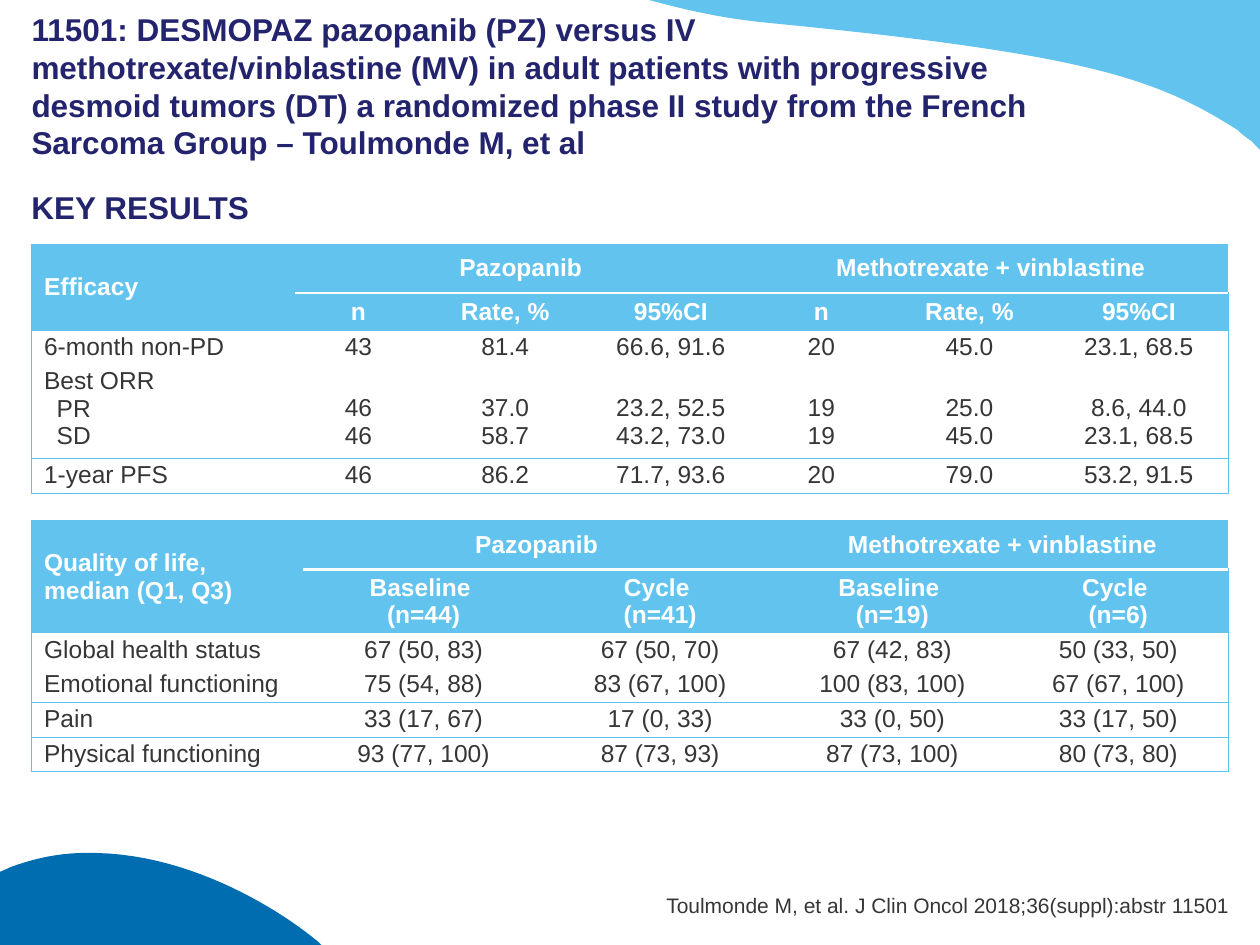
from collections import namedtuple
from dataclasses import dataclass

from lxml import etree
from pptx import Presentation
from pptx.dml.color import RGBColor
from pptx.enum.text import MSO_ANCHOR, MSO_AUTO_SIZE, PP_ALIGN
from pptx.oxml.ns import qn
from pptx.util import Inches, Pt

LEFT, CENTER, RIGHT = PP_ALIGN.LEFT, PP_ALIGN.CENTER, PP_ALIGN.RIGHT
TOP, MIDDLE, BOTTOM = MSO_ANCHOR.TOP, MSO_ANCHOR.MIDDLE, MSO_ANCHOR.BOTTOM
NO_AUTOFIT = MSO_AUTO_SIZE.NONE
TITLE_ONLY = 5
CURVE_STEPS = 24
PLAIN_TABLE_STYLE = "{2D5ABB26-0587-4C30-8999-92F81FD0307C}"

Box = namedtuple("Box", "left top width height")


@dataclass(frozen=True)
class Theme:
    font: str = "Arial"
    heading: str = "23246D"
    body: str = "363636"
    white: str = "FFFFFF"
    sky: str = "62C4EE"
    deep: str = "006DB0"
    rule: str = "5CC1EC"
    heading_size: int = 18
    table_size: int = 14
    footer_size: int = 12
    thin: float = 0.75
    thick: float = 1.5


THEME = Theme()

TITLE = (
    "11501: DESMOPAZ pazopanib (PZ) versus IV \v"
    "methotrexate/vinblastine (MV) in adult patients with progressive desmoid tumors (DT) "
    "a randomized phase II study from the French Sarcoma Group – Toulmonde M, et al"
)
ARMS = ["Pazopanib ", "Methotrexate + vinblastine"]

EFFICACY = dict(
    corner="Efficacy",
    columns=[2.09, 1.01, 1.32, 1.31, 1.08, 1.27, 1.42],
    rows=[0.39, 0.3, 0.27, 0.74, 0.28],
    subheads=["n", "Rate, %", "95%CI"] * 2,
    body=[
        ["6-month non-PD", "43", "81.4", "66.6, 91.6", "20", "45.0", "23.1, 68.5"],
        ["Best ORR\nPR\nSD", "46\n46", "37.0\n58.7", "23.2, 52.5\n43.2, 73.0",
         "19\n19", "25.0\n45.0", "8.6, 44.0\n23.1, 68.5"],
        ["1-year PFS", "46", "86.2", "71.7, 93.6", "20", "79.0", "53.2, 91.5"],
    ],
    ruled_edges={4, 5},
)
QUALITY = dict(
    corner="Quality of life, median (Q1, Q3)",
    columns=[2.16, 1.91, 1.85, 1.84, 1.75],
    rows=[0.39, 0.5] + [0.275] * 4,
    subheads=["Baseline \n(n=44)", "Cycle \n(n=41)", "Baseline \n(n=19)", "Cycle \n(n=6)"],
    body=[
        ["Global health status", "67 (50, 83)", "67 (50, 70)", "67 (42, 83)", "50 (33, 50)"],
        ["Emotional functioning", "75 (54, 88)", "83 (67, 100)", "100 (83, 100)", "67 (67, 100)"],
        ["Pain", "33 (17, 67)", "17 (0, 33)", "33 (0, 50)", "33 (17, 50)"],
        ["Physical functioning", "93 (77, 100)", "87 (73, 93)", "87 (73, 100)", "80 (73, 80)"],
    ],
    ruled_edges={4, 5, 6},
)

TOP_WAVE = [
    [(0, 0)], [(100, 0)], [(100, 100)], [(98.6, 94.1)],
    [(97.7, 91.6), (96.9, 89.1), (96.3, 86.6)],
    [(82.9, 52.1), (72, 36.1), (19.2, 15.1)],
    [(12.8, 12.6), (7, 7.6), (1.6, 1.7)],
]
BOTTOM_WAVE = [
    [(26.3, 0)], [(56.9, -2.7), (85.5, 57.5), (98.8, 95.9)],
    [(100, 100)], [(0, 100)], [(0, 20.5)], [(3.5, 15.1)],
    [(11, 5.5), (18.8, 0), (26.3, 0)],
]


def percent_box(presentation, left, top, width, height):
    across, down = presentation.slide_width / 100, presentation.slide_height / 100
    return Box(*(round(value) for value in (left * across, top * down, width * across, height * down)))


def write_text(frame, text, size, color, bold=False, align=LEFT, anchor=TOP,
               margins=(0, 0.05, 0, 0.05), later_indent=0):
    frame.word_wrap = True
    frame.vertical_anchor = anchor
    (frame.margin_left, frame.margin_top,
     frame.margin_right, frame.margin_bottom) = (Inches(margin) for margin in margins)
    frame.text = text
    for index, paragraph in enumerate(frame.paragraphs):
        paragraph.alignment = align
        if index and later_indent:
            paragraph._p.get_or_add_pPr().set("marL", str(Inches(later_indent)))
        for run in paragraph.runs:
            run.font.name = THEME.font
            run.font.size = Pt(size)
            run.font.bold = bold
            run.font.color.rgb = RGBColor.from_string(color)


def add_label(slide, box, text, size, color, **text_format):
    frame = slide.shapes.add_textbox(*box).text_frame
    write_text(frame, text, size, color, **text_format)


def place_title(slide, box, text):
    title = slide.shapes.title
    title.left, title.top, title.width, title.height = box
    write_text(title.text_frame, text, THEME.heading_size, THEME.heading, bold=True,
               anchor=BOTTOM, margins=(0, 0.05, 0, 0))
    title.text_frame.auto_size = NO_AUTOFIT


def curve_points(start, first, second, end):
    for step in range(1, CURVE_STEPS + 1):
        t = step / CURVE_STEPS
        weights = ((1 - t) ** 3, 3 * t * (1 - t) ** 2, 3 * t * t * (1 - t), t ** 3)
        yield tuple(sum(weight * point[axis] for weight, point in zip(weights, (start, first, second, end)))
                    for axis in (0, 1))


def add_wave(slide, box, segments, color):
    outline = list(segments[0])
    for segment in segments[1:]:
        outline += curve_points(outline[-1], *segment) if len(segment) == 3 else segment
    points = [(round(box.left + x * box.width / 100), round(box.top + y * box.height / 100))
              for x, y in outline]
    builder = slide.shapes.build_freeform(*points[0])
    builder.add_line_segments(points[1:], close=True)
    wave = builder.convert_to_shape()
    wave.shadow.inherit = False
    wave.fill.solid()
    wave.fill.fore_color.rgb = RGBColor.from_string(color)
    wave.line.fill.background()
    slide.shapes._spTree.insert(2, wave._element)


def set_borders(cell, **borders):
    properties = cell._tc.get_or_add_tcPr()
    for index, side in enumerate(("L", "R", "T", "B")):
        border = borders.get(side)
        line = etree.Element(qn(f"a:ln{side}"))
        if border:
            color, width = border
            line.set("w", str(Pt(width)))
            fill = etree.SubElement(line, qn("a:solidFill"))
            etree.SubElement(fill, qn("a:srgbClr")).set("val", color)
        else:
            etree.SubElement(line, qn("a:noFill"))
        properties.insert(index, line)


def add_results_table(slide, box, corner, columns, rows, subheads, body, ruled_edges):
    table_shape = slide.shapes.add_table(len(rows), len(columns), *box)
    table = table_shape.table
    table.first_row = table.horz_banding = False
    table._tbl.tblPr.find(qn("a:tableStyleId")).text = PLAIN_TABLE_STYLE
    for column, share in zip(table.columns, columns):
        column.width = round(box.width * share / sum(columns))
    for row, share in zip(table.rows, rows):
        row.height = round(box.height * share / sum(rows))

    span = len(subheads) // len(ARMS)
    arm_row = [corner] + [text for arm in ARMS for text in [arm] + [""] * (span - 1)]
    thin, thick = (THEME.rule, THEME.thin), (THEME.white, THEME.thick)

    for row_index, texts in enumerate([arm_row, [""] + subheads] + body):
        header = row_index < 2
        most_lines = max(text.count("\n") for text in texts)
        for column_index, text in enumerate(texts):
            cell = table.cell(row_index, column_index)
            if header:
                cell.fill.solid()
                cell.fill.fore_color.rgb = RGBColor.from_string(THEME.sky)
            else:
                cell.fill.background()
            lowered = not header and text.count("\n") < most_lines
            anchor = MIDDLE if header else BOTTOM if lowered else TOP
            write_text(cell.text_frame, text, THEME.table_size,
                       THEME.white if header else THEME.body, bold=header,
                       align=CENTER if column_index else LEFT, later_indent=0 if header or column_index else 0.1)
            cell.vertical_anchor = anchor
            cell.margin_left = cell.margin_right = Inches(0.1)
            cell.margin_top = Inches(0.02)
            cell.margin_bottom = Inches(0.07 if lowered else 0.02)

            def edge(number):
                if number == 1 and column_index:
                    return thick
                return thin if number in ruled_edges else None

            set_borders(cell, T=edge(row_index), B=edge(row_index + 1),
                        L=None if column_index else thin,
                        R=thin if column_index == len(columns) - 1 else None)

    table.cell(0, 0).merge(table.cell(1, 0))
    for first in range(1, len(columns), span):
        table.cell(0, first).merge(table.cell(0, first + span - 1))


def main():
    presentation = Presentation()
    presentation.slide_width, presentation.slide_height = Inches(10), Inches(7.5)
    slide = presentation.slides.add_slide(presentation.slide_layouts[TITLE_ONLY])

    def area(*shares):
        return percent_box(presentation, *shares)

    add_wave(slide, area(51.5, 0, 48.5, 15.87), TOP_WAVE, THEME.sky)
    add_wave(slide, area(0, 90.27, 25.5, 9.73), BOTTOM_WAVE, THEME.deep)
    place_title(slide, area(2.5, 3.33, 85.2, 13.73), TITLE)
    add_label(slide, area(2.5, 19.2, 95, 77.47), "KEY RESULTS", THEME.heading_size, THEME.heading, bold=True)
    add_label(slide, area(52.6, 94.4, 45, 2.67), "Toulmonde M, et al. J Clin Oncol 2018;36(suppl):abstr 11501",
              THEME.footer_size, THEME.body, align=RIGHT, anchor=BOTTOM, margins=(0, 0, 0, 0))
    add_results_table(slide, area(2.5, 25.8, 95, 26.4), **EFFICACY)
    add_results_table(slide, area(2.5, 55.07, 95, 26.53), **QUALITY)
    presentation.save("out.pptx")


if __name__ == "__main__":
    main()
